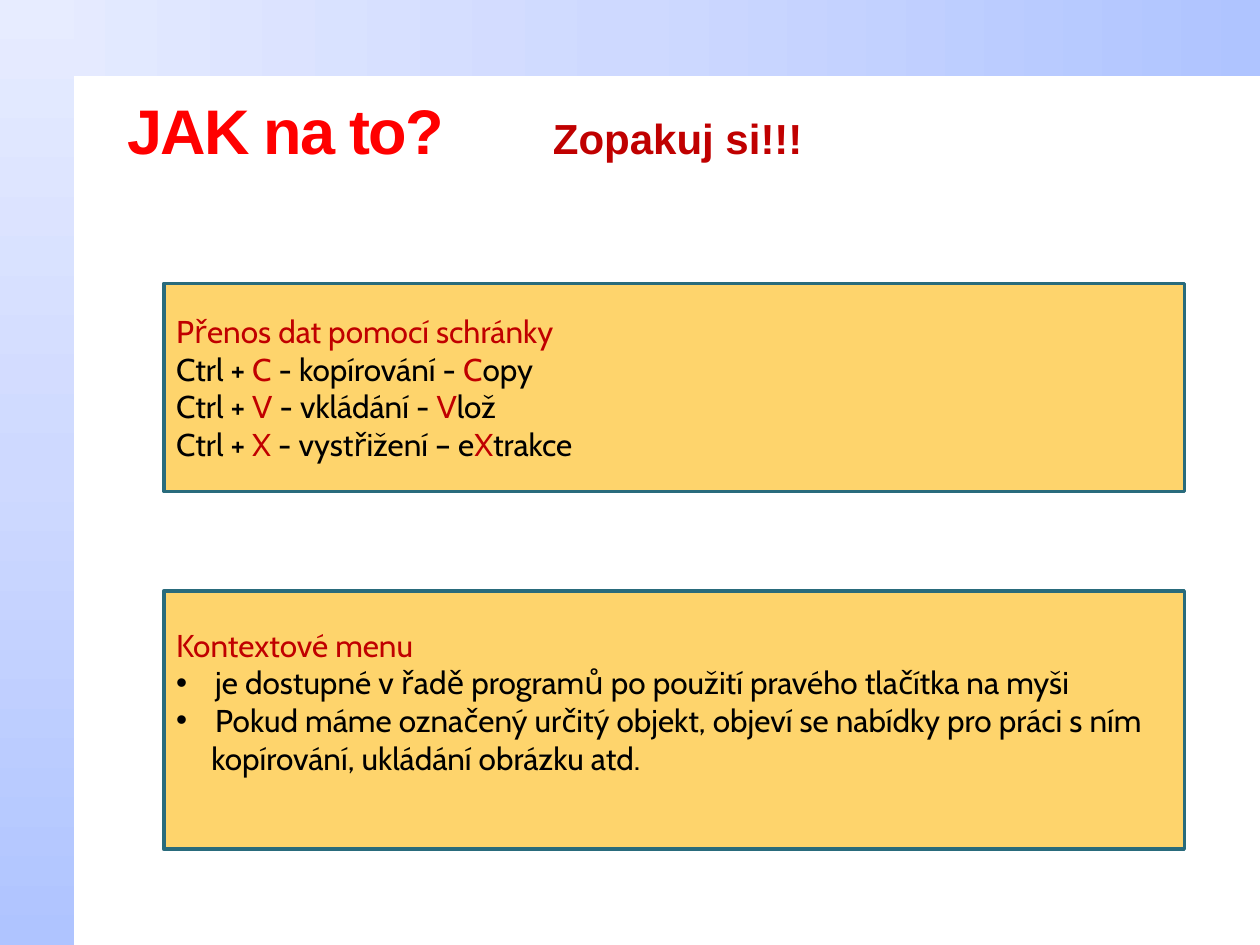
from copy import deepcopy
from pptx import Presentation
from pptx.dml.color import RGBColor as Rgb
from pptx.enum.shapes import MSO_SHAPE as Kind
from pptx.enum.text import MSO_ANCHOR as Anchor, PP_ALIGN as Align
from pptx.oxml.ns import qn
from pptx.util import Inches, Pt

THEME = {
    "head": "Arial", "body": "Cabin",
    "big": 36, "mid": 24, "text": 18,
    "hot": "FF0000", "red": "C00000", "ink": "000000",
    "fill": "FED46C", "edge": "296B7C",
    "fade": [(0, "AFC4FF"), (0.5, "CED9FF"), (1, "E7ECFF")],
}
TITLE = "JAK na to?"
NOTE = "Zopakuj si!!!"
BARS = [((0, 0, 10, 0.6), 180), ((0, 0, 0.59, 7.5), 90)]
LEFT, WIDE = 1.3, 8.1
HANG, STEP = 0.31, 0.28
BOXES = [
    {"top": 4.69, "high": 2.05, "foot": 0.35, "rows": [
        ([("Kontextové menu", "red")], None),
        ([("je dostupné v řadě programů po použití pravého tlačítka na myši", "ink")], "dot"),
        ([("Pokud máme označený určitý objekt, objeví se nabídky pro práci s ním", "ink")], "dot"),
        ([("kopírování, ukládání obrázku atd.", "ink")], "step"),
    ]},
    {"top": 2.25, "high": 1.65, "foot": 0.05, "rows": [
        ([("Přenos dat pomocí schránky", "red")], None),
        ([("Ctrl + ", "ink"), ("C ", "red"), ("- kopírování - ", "ink"),
          ("C", "red"), ("opy", "ink")], None),
        ([("Ctrl + ", "ink"), ("V ", "red"), ("- vkládání - ", "ink"),
          ("V", "red"), ("lož", "ink")], None),
        ([("Ctrl + ", "ink"), ("X ", "red"), ("- vystřižení – e", "ink"),
          ("X", "red"), ("trakce", "ink")], None),
    ]},
]


def write(para, text, font="body", size="text", color="ink", bold=False, gap=None):
    run = para.add_run()
    run.text = text
    run.font.name = THEME[font]
    run.font.size = Pt(THEME[size])
    run.font.bold = bold
    run.font.color.rgb = Rgb.from_string(THEME[color])
    if gap is not None:
        run.font._element.set("spc", str(gap))


def indent(para, mode):
    props = para._p.get_or_add_pPr()
    if mode == "dot":
        props.set("marL", str(Inches(HANG)))
        props.set("indent", str(-Inches(HANG)))
        font = props.makeelement(qn("a:buFont"), {"typeface": THEME["head"]})
        mark = props.makeelement(qn("a:buChar"), {"char": "•"})
        props.extend([font, mark])
    elif mode == "step":
        props.set("marL", str(Inches(STEP)))
        props.set("indent", "0")


def rect(slide, area):
    shape = slide.shapes.add_shape(Kind.RECTANGLE, *map(Inches, area))
    shape.shadow.inherit = False
    return shape


def add_bar(slide, area, angle):
    bar = rect(slide, area)
    bar.line.fill.background()
    bar.fill.gradient()
    bar.fill.gradient_angle = angle
    stops = bar._element.spPr.find(qn("a:gradFill")).find(qn("a:gsLst"))
    stops.append(deepcopy(stops[0]))
    for stop, (spot, color) in zip(bar.fill.gradient_stops, THEME["fade"]):
        stop.position = spot
        stop.color.rgb = Rgb.from_string(color)


def add_box(slide, top, high, foot, rows):
    box = rect(slide, (LEFT, top, WIDE, high))
    box.fill.solid()
    box.fill.fore_color.rgb = Rgb.from_string(THEME["fill"])
    box.line.color.rgb = Rgb.from_string(THEME["edge"])
    box.line.width = Pt(2)
    frame = box.text_frame
    frame.word_wrap = True
    frame.vertical_anchor = Anchor.MIDDLE
    frame.margin_bottom = Inches(foot)
    for i, (runs, mode) in enumerate(rows):
        para = frame.add_paragraph() if i else frame.paragraphs[0]
        para.alignment = Align.LEFT
        indent(para, mode)
        for text, color in runs:
            write(para, text, color=color)


def main():
    deck = Presentation()
    deck.slide_width, deck.slide_height = Inches(10), Inches(7.5)
    slide = deck.slides.add_slide(deck.slide_layouts[5])
    for area, angle in BARS:
        add_bar(slide, area, angle)

    note = slide.shapes.add_textbox(*map(Inches, (4.29, 0.84, 5.51, 0.5))).text_frame
    note.word_wrap = True
    write(note.paragraphs[0], NOTE, font="head", size="mid", color="red", bold=True)

    title = slide.shapes.title
    title.left, title.top, title.width, title.height = map(Inches, (0.91, 0.63, 3.39, 0.79))
    title.text_frame.vertical_anchor = Anchor.MIDDLE
    head = title.text_frame.paragraphs[0]
    head.alignment = Align.LEFT
    write(head, TITLE, font="head", size="big", color="hot", bold=True, gap=-100)

    for box in BOXES:
        add_box(slide, **box)
    deck.save("out.pptx")


if __name__ == "__main__":
    main()
